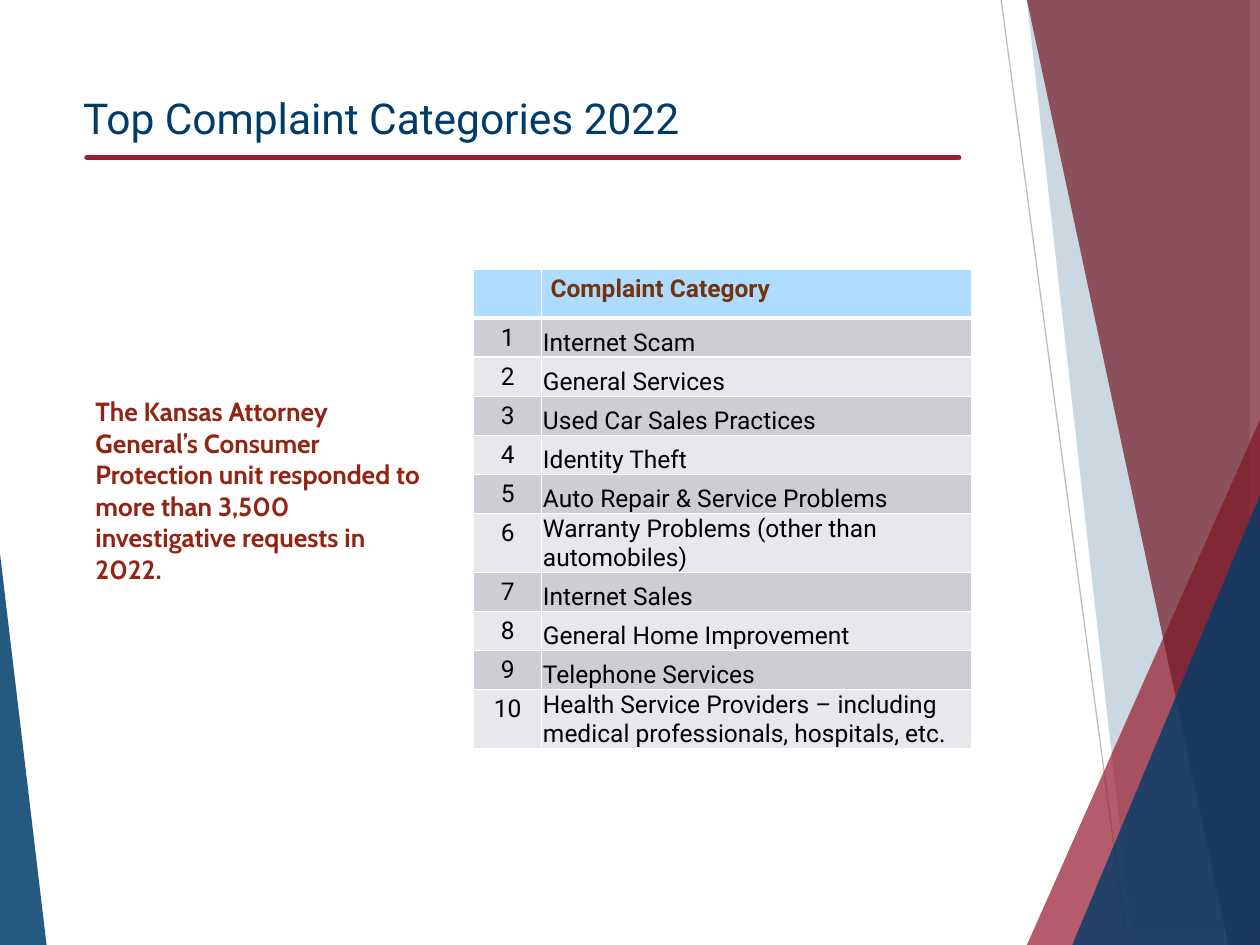
from lxml import etree
from pptx import Presentation
from pptx.dml.color import RGBColor
from pptx.enum.shapes import MSO_CONNECTOR, MSO_SHAPE
from pptx.enum.text import MSO_ANCHOR, MSO_AUTO_SIZE, PP_ALIGN
from pptx.oxml.ns import qn
from pptx.util import Inches, Pt

TRIANGLE = MSO_SHAPE.ISOSCELES_TRIANGLE
STRAIGHT = MSO_CONNECTOR.STRAIGHT
MIDDLE, BOTTOM, TOP = MSO_ANCHOR.MIDDLE, MSO_ANCHOR.BOTTOM, MSO_ANCHOR.TOP
LEFT, CENTER = PP_ALIGN.LEFT, PP_ALIGN.CENTER
FIXED = MSO_AUTO_SIZE.NONE

COLORS = {
    "navy": "003C69", "red": "981E32", "wine": "721725", "gray": "BFBFBF",
    "sky": "AEDCFF", "brown": "74330C", "rust": "932313", "dark": "CCCED4",
    "light": "E7E8EB", "white": "FFFFFF", "black": "000000",
}
TOPICS = [
    "Internet Scam", "General Services", "Used Car Sales Practices",
    "Identity Theft", "Auto Repair & Service Problems",
    "Warranty Problems (other than automobiles)", "Internet Sales",
    "General Home Improvement", "Telephone Services",
    "Health Service Providers – including medical professionals, hospitals, etc.",
]
TALL = (6, 10)
NOTE = ("The Kansas Attorney General’s Consumer Protection unit responded to "
        "more than 3,500 investigative requests in 2022.")


def rgb(name):
    return RGBColor.from_string(COLORS[name])


def paint(shape, color, alpha):
    """Fill a shape without outline; alpha is the opacity in percent."""
    shape.shadow.inherit = False
    shape.line.fill.background()
    shape.fill.solid()
    shape.fill.fore_color.rgb = rgb(color)
    tint = shape.fill._xPr.find(qn("a:solidFill"))[0]
    etree.SubElement(tint, qn("a:alpha")).set("val", str(alpha * 1000))


def style(frame, font, size, color, bold=False, align=LEFT):
    for para in frame.paragraphs:
        para.alignment = align
        for run in para.runs:
            run.font.name = font
            run.font.size = Pt(size)
            run.font.bold = bold
            run.font.color.rgb = rgb(color)


def add_line(slide, start, end, color, width):
    line = slide.shapes.add_connector(
        STRAIGHT, *(Inches(v) for v in (*start, *end)))
    line.line.color.rgb = rgb(color)
    line.line.width = Pt(width)
    etree.SubElement(line._element.spPr, qn("a:effectLst"))
    return line


def add_facet(slide, points, color, alpha):
    first, *rest = [(Inches(x), Inches(y)) for x, y in points]
    pen = slide.shapes.build_freeform(*first)
    pen.add_line_segments(rest, close=True)
    paint(pen.convert_to_shape(), color, alpha)


def add_wedge(slide, box, apex, color, alpha):
    wedge = slide.shapes.add_shape(TRIANGLE, *(Inches(v) for v in box))
    wedge.adjustments[0] = apex
    paint(wedge, color, alpha)


def add_decor(slide, left, right, base):
    """Place the facets between left and right, and the corner wedge."""
    add_line(slide, (left - 0.22, -0.12), (left + 0.78, 7.38), "gray", 0.75)
    add_facet(slide, [(left, 0), (9.92, 0), (9.92, 7.38), (8.98, 7.38)],
              "navy", 20)
    add_wedge(slide, (left, 3.33, right - left, base - 3.33), 1, "red", 72)
    add_facet(slide, [(left, 0), (right, 0), (right, base), (9.75, base)],
              "wine", 70)
    add_wedge(slide, (8.51, 3.93, right - 8.51, base - 3.93), 1, "navy", 80)
    add_wedge(slide, (0, 4.39, 0.37, base - 4.39), 0, "navy", 85)


def add_title(slide, left, top, width, height):
    title = slide.shapes.title
    title.left, title.top = Inches(left), Inches(top)
    title.width, title.height = Inches(width), Inches(height)
    frame = title.text_frame
    frame.text = "Top Complaint Categories 2022"
    frame.auto_size = FIXED
    frame.vertical_anchor = MIDDLE
    style(frame, "Roboto", 24.3, "navy")
    rule = add_line(slide, (0.69, 1.25), (7.61, 1.25), "red", 3)
    rule.line._get_or_add_ln().set("cap", "rnd")


def add_note(slide, left, top, width, height):
    box = slide.shapes.add_textbox(
        Inches(left), Inches(top), Inches(width), Inches(height))
    box.text_frame.word_wrap = True
    box.text_frame.text = NOTE
    style(box.text_frame, "Cabin", 15, "rust", True)


def edge_cell(cell, below):
    """Draw white cell borders; below is the width of the bottom one."""
    props = cell._tc.get_or_add_tcPr()
    sides = (("lnL", 1), ("lnR", 1), ("lnT", 1), ("lnB", below))
    for place, (side, width) in enumerate(sides):
        line = etree.Element(qn("a:" + side), w=str(Pt(width)))
        fill = etree.SubElement(line, qn("a:solidFill"))
        etree.SubElement(fill, qn("a:srgbClr")).set("val", COLORS["white"])
        props.insert(place, line)


def set_cell(cell, text, fill, pads, anchor, align, head):
    cell.text = text
    cell.fill.solid()
    cell.fill.fore_color.rgb = rgb(fill)
    (cell.margin_left, cell.margin_top,
     cell.margin_right, cell.margin_bottom) = (Inches(p) for p in pads)
    cell.vertical_anchor = anchor
    style(cell.text_frame, "Roboto", 14, "brown" if head else "black",
          head, align)
    edge_cell(cell, 3 if head else 1)


def add_ranks(slide, left, top, width, height):
    rows = [("", "Complaint Category")]
    rows += [(str(n), topic) for n, topic in enumerate(TOPICS, 1)]
    table = slide.shapes.add_table(
        len(rows), 2, Inches(left), Inches(top),
        Inches(width), Inches(height)).table
    table.columns[0].width = Inches(0.54)
    table.columns[1].width = Inches(width - 0.54)
    wide, tight = (0.07, 0.04, 0.07, 0.04), (0.01, 0.01, 0.01, 0)
    for r, (rank, topic) in enumerate(rows):
        table.rows[r].height = Inches(0.46 if r in TALL else 0.3)
        head = r == 0
        fill = "sky" if head else "dark" if r % 2 else "light"
        set_cell(table.cell(r, 0), rank, fill, wide, TOP, CENTER, head)
        set_cell(table.cell(r, 1), topic, fill, wide if head else tight,
                 TOP if head else BOTTOM, LEFT, head)


def main():
    deck = Presentation()
    deck.slide_width, deck.slide_height = Inches(10), Inches(7.5)
    slide = deck.slides.add_slide(deck.slide_layouts[5])
    add_decor(slide, 8.15, 10, 7.5)
    add_title(slide, 0.56, 0.64, 7.05, 0.59)
    add_ranks(slide, 3.76, 2.14, 3.95, 3.72)
    add_note(slide, 0.66, 3.09, 2.9, 1.36)
    deck.save("out.pptx")


if __name__ == "__main__":
    main()
